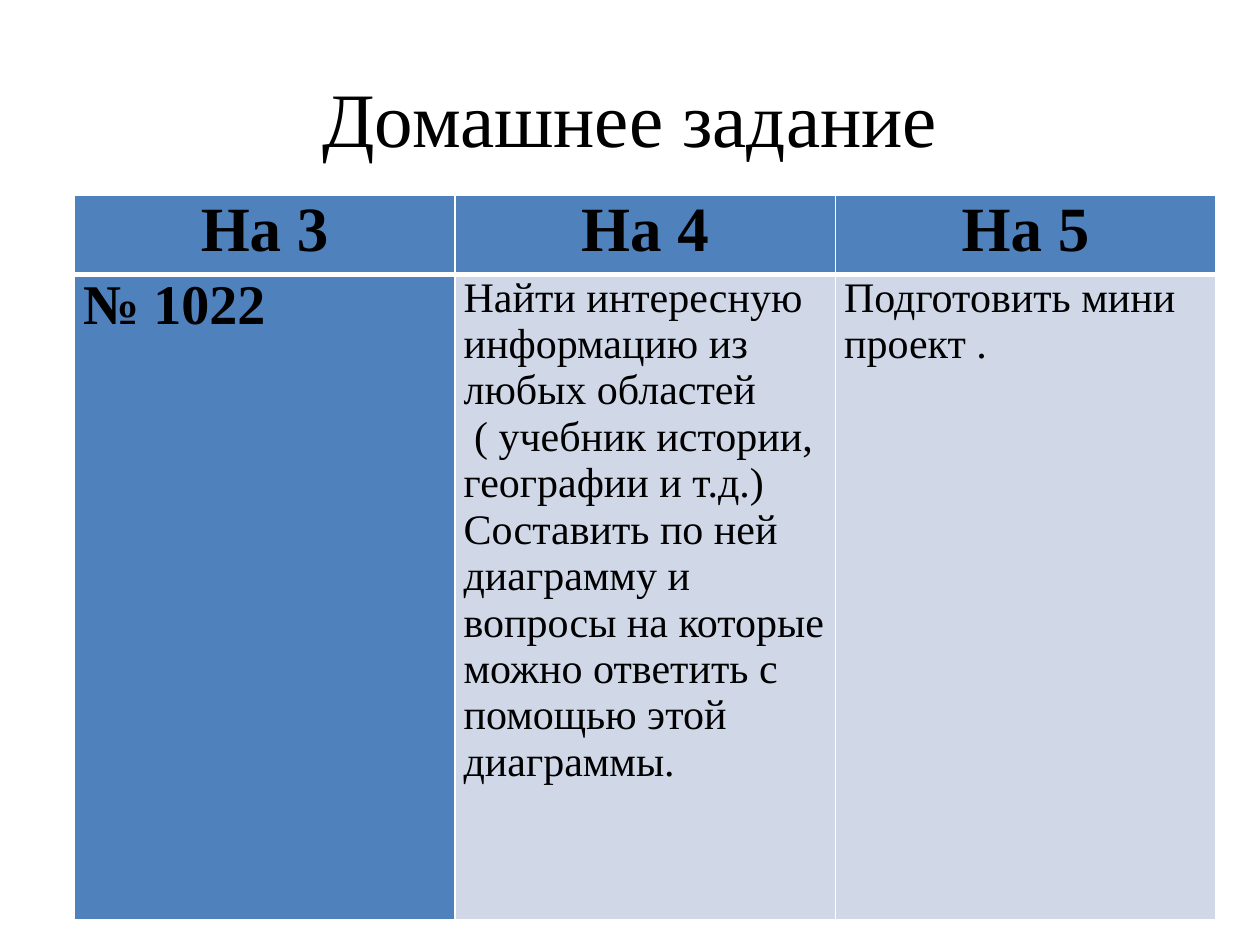
from lxml.etree import SubElement
from pptx import Presentation
from pptx.dml.color import RGBColor
from pptx.enum.text import MSO_ANCHOR, PP_ALIGN
from pptx.oxml.ns import qn
from pptx.util import Inches, Pt

FONT = "Times New Roman"
BLACK = RGBColor(0x00, 0x00, 0x00)
WHITE = RGBColor(0xFF, 0xFF, 0xFF)
BLUE = RGBColor(0x4F, 0x81, 0xBD)
PALE_BLUE = RGBColor(0xD0, 0xD8, 0xE8)

COLUMN_WIDTH = 3.02
ROW_HEIGHTS = (0.63, 5.12)
GRADES = ("На 3", "На 4", "На 5")
TASKS = (
    ("№ 1022",),
    (
        "Найти интересную информацию из любых областей",
        " ( учебник истории, географии и т.д.) Составить по ней диаграмму "
        "и вопросы на которые можно ответить с помощью этой диаграммы.",
    ),
    ("Подготовить мини проект .",),
)


def write_text(text_frame, lines, size, bold=False, alignment=PP_ALIGN.LEFT):
    """Write each line as a paragraph with one styled run."""
    text_frame.word_wrap = True
    for index, line in enumerate(lines):
        paragraph = text_frame.paragraphs[0] if index == 0 else text_frame.add_paragraph()
        paragraph.alignment = alignment
        run = paragraph.add_run()
        run.text = line
        run.font.name = FONT
        run.font.size = Pt(size)
        run.font.bold = bold
        run.font.color.rgb = BLACK


def add_title(slide, text):
    """Add the centred slide title."""
    title = slide.shapes.add_textbox(Inches(0.5), Inches(0.3), Inches(9), Inches(1.25))
    title.text_frame.vertical_anchor = MSO_ANCHOR.MIDDLE
    write_text(title.text_frame, [text], 44, alignment=PP_ALIGN.CENTER)


def set_borders(cell, top, bottom):
    """Draw white borders around a cell, with widths in points."""
    properties = cell._tc.get_or_add_tcPr()
    for side, width in (("L", 1), ("R", 1), ("T", top), ("B", bottom)):
        line = SubElement(properties, qn(f"a:ln{side}"), w=str(Pt(width)))
        fill = SubElement(line, qn("a:solidFill"))
        SubElement(fill, qn("a:srgbClr"), val=str(WHITE))


def fill_cell(cell, lines, size, color, bold, alignment, borders):
    """Set the text, margins, borders and fill of a cell."""
    cell.margin_left = cell.margin_right = Inches(0.07)
    cell.margin_top = cell.margin_bottom = 0
    write_text(cell.text_frame, lines, size, bold, alignment)
    set_borders(cell, *borders)
    cell.fill.solid()
    cell.fill.fore_color.rgb = color


def add_homework_table(slide):
    """Add the table of homework tasks by grade."""
    frame = slide.shapes.add_table(
        len(ROW_HEIGHTS), len(GRADES), Inches(0.59), Inches(1.55),
        Inches(COLUMN_WIDTH * len(GRADES)), Inches(sum(ROW_HEIGHTS)),
    )
    table = frame.table
    table.first_col = True
    for row, height in zip(table.rows, ROW_HEIGHTS):
        row.height = Inches(height)
    for column, (grade, task) in enumerate(zip(GRADES, TASKS)):
        table.columns[column].width = Inches(COLUMN_WIDTH)
        fill_cell(table.cell(0, column), [grade], 36, BLUE, True, PP_ALIGN.CENTER, (1, 3))
        first = column == 0
        fill_cell(
            table.cell(1, column), task, 32 if first else 24,
            BLUE if first else PALE_BLUE, first, PP_ALIGN.LEFT, (3, 1),
        )


def main():
    """Build and save the homework slide."""
    presentation = Presentation()
    presentation.slide_width = Inches(10)
    presentation.slide_height = Inches(7.5)
    slide = presentation.slides.add_slide(presentation.slide_layouts[6])
    add_title(slide, "Домашнее задание")
    add_homework_table(slide)
    presentation.save("out.pptx")


if __name__ == "__main__":
    main()
